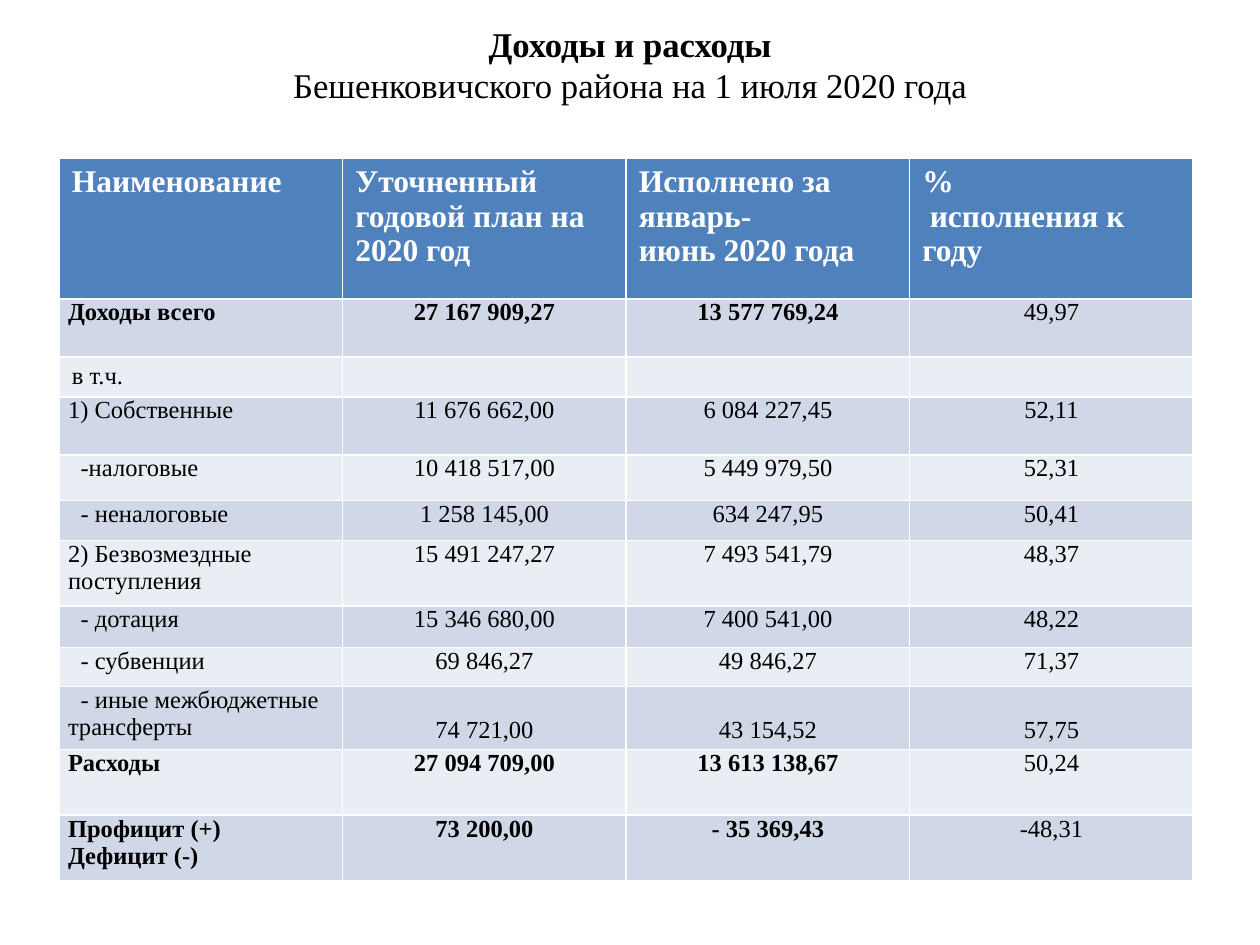
from dataclasses import dataclass

from pptx import Presentation
from pptx.dml.color import RGBColor
from pptx.enum.text import MSO_ANCHOR, PP_ALIGN
from pptx.util import Inches, Pt

LEFT, CENTER = PP_ALIGN.LEFT, PP_ALIGN.CENTER
TOP, MIDDLE, BOTTOM = MSO_ANCHOR.TOP, MSO_ANCHOR.MIDDLE, MSO_ANCHOR.BOTTOM


@dataclass(frozen=True)
class Theme:
    font: str = "Times New Roman"
    title_size: float = 19.8
    header_size: float = 18
    body_size: float = 14
    ink: str = "000000"
    header_ink: str = "FFFFFF"
    header_fill: str = "4F81BD"
    bands: tuple = ("D0D8E8", "E9EDF4")


@dataclass(frozen=True)
class BudgetLine:
    name: str
    plan: str = ""
    actual: str = ""
    percent: str = ""
    height: float = 0.52
    total: bool = False
    sub_item: bool = False
    padded: bool = False
    figures_anchor: MSO_ANCHOR = TOP


HEADINGS = (
    "Наименование",
    "Уточненный\nгодовой план на 2020 год",
    "Исполнено за январь-\nиюнь 2020 года",
    "%\nисполнения к году",
)
HEADER_HEIGHT = 1.12
SUB_ITEM_INDENT = 0.1
PERCENT_INDENT = 0.06

BUDGET = (
    BudgetLine("Доходы всего", "27 167 909,27", "13 577 769,24", "49,97", 0.46, total=True),
    BudgetLine("в т.ч.", height=0.32, padded=True),
    BudgetLine("1) Собственные", "11 676 662,00", "6 084 227,45", "52,11", 0.46),
    BudgetLine("-налоговые", "10 418 517,00", "5 449 979,50", "52,31", 0.36, sub_item=True),
    BudgetLine("- неналоговые", "1 258 145,00", "634 247,95", "50,41", 0.32, sub_item=True),
    BudgetLine("2) Безвозмездные поступления", "15 491 247,27", "7 493 541,79", "48,37"),
    BudgetLine("- дотация", "15 346 680,00", "7 400 541,00", "48,22", 0.33, sub_item=True),
    BudgetLine("- субвенции", "69 846,27", "49 846,27", "71,37", 0.31, sub_item=True),
    BudgetLine("- иные межбюджетные трансферты", "74 721,00", "43 154,52", "57,75", 0.5,
               sub_item=True, figures_anchor=BOTTOM),
    BudgetLine("Расходы", "27 094 709,00", "13 613 138,67", "50,24", total=True),
    BudgetLine("Профицит (+)\nДефицит (-)", "73 200,00", "- 35 369,43", "-48,31", total=True),
)


class BudgetSlide:
    def __init__(self, presentation, theme):
        self.theme = theme
        self.width = presentation.slide_width
        self.height = presentation.slide_height
        self.slide = presentation.slides.add_slide(presentation.slide_layouts[5])

    def box(self, left, top, width, height):
        """Turn shares of the slide into lengths."""
        return (round(left * self.width), round(top * self.height),
                round(width * self.width), round(height * self.height))

    def run(self, paragraph, text, size, color, bold=False):
        run = paragraph.add_run()
        run.text = text
        run.font.name = self.theme.font
        run.font.size = Pt(size)
        run.font.bold = bold
        run.font.color.rgb = RGBColor.from_string(color)

    def title(self, heading, subject):
        title = self.slide.shapes.title
        title.left, title.top, title.width, title.height = self.box(0.05, 0.04, 0.9, 0.096)
        frame = title.text_frame
        frame.word_wrap = True
        frame.vertical_anchor = MIDDLE
        frame.margin_top, frame.margin_bottom = 0, Inches(0.3)
        paragraph = frame.paragraphs[0]
        paragraph.alignment = CENTER
        self.run(paragraph, heading, self.theme.title_size, self.theme.ink, bold=True)
        paragraph.add_line_break()
        self.run(paragraph, subject, self.theme.title_size, self.theme.ink)

    def cell(self, cell, text, size, color, fill, bold=False, align=LEFT,
             anchor=TOP, padded=False, indent=0):
        """Fill a cell; the indent applies to the first line of its last paragraph."""
        cell.fill.solid()
        cell.fill.fore_color.rgb = RGBColor.from_string(fill)
        cell.vertical_anchor = anchor
        cell.margin_left = cell.margin_right = Inches(0.1 if padded else 0.07)
        cell.margin_top = Inches(0.05 if padded else 0)
        cell.margin_bottom = Inches(0.05 if padded or anchor == BOTTOM else 0)
        if not text:
            return
        frame = cell.text_frame
        for index, line in enumerate(text.split("\n")):
            paragraph = frame.add_paragraph() if index else frame.paragraphs[0]
            paragraph.alignment = align
            self.run(paragraph, line, size, color, bold)
        if indent:
            properties = paragraph._p.get_or_add_pPr()
            properties.set("marL", "0")
            properties.set("indent", str(Inches(indent)))

    def budget_table(self, headings, budget):
        theme = self.theme
        heights = [HEADER_HEIGHT] + [line.height for line in budget]
        left, top, width, _ = self.box(0.047, 0.167, 0.9, 0)
        table = self.slide.shapes.add_table(
            len(heights), len(headings), left, top, width, Inches(sum(heights))).table
        for row, height in zip(table.rows, heights):
            row.height = Inches(height)

        for column, heading in enumerate(headings):
            is_percent = column == len(headings) - 1
            self.cell(table.cell(0, column), heading, theme.header_size, theme.header_ink,
                      theme.header_fill, bold=True, padded=True,
                      indent=PERCENT_INDENT if is_percent else 0)

        for row, line in enumerate(budget, start=1):
            band = theme.bands[(row - 1) % 2]
            self.cell(table.cell(row, 0), line.name, theme.body_size, theme.ink, band,
                      bold=line.total, padded=line.padded,
                      indent=SUB_ITEM_INDENT if line.sub_item else 0)
            figures = ((line.plan, line.total), (line.actual, line.total), (line.percent, False))
            for column, (figure, bold) in enumerate(figures, start=1):
                self.cell(table.cell(row, column), figure, theme.body_size, theme.ink, band,
                          bold=bold, align=CENTER, anchor=line.figures_anchor)


def main():
    presentation = Presentation()
    presentation.slide_width, presentation.slide_height = Inches(10), Inches(7.5)
    slide = BudgetSlide(presentation, Theme())
    slide.title("Доходы и расходы", "Бешенковичского района на 1 июля 2020 года")
    slide.budget_table(HEADINGS, BUDGET)
    presentation.save("out.pptx")


if __name__ == "__main__":
    main()
